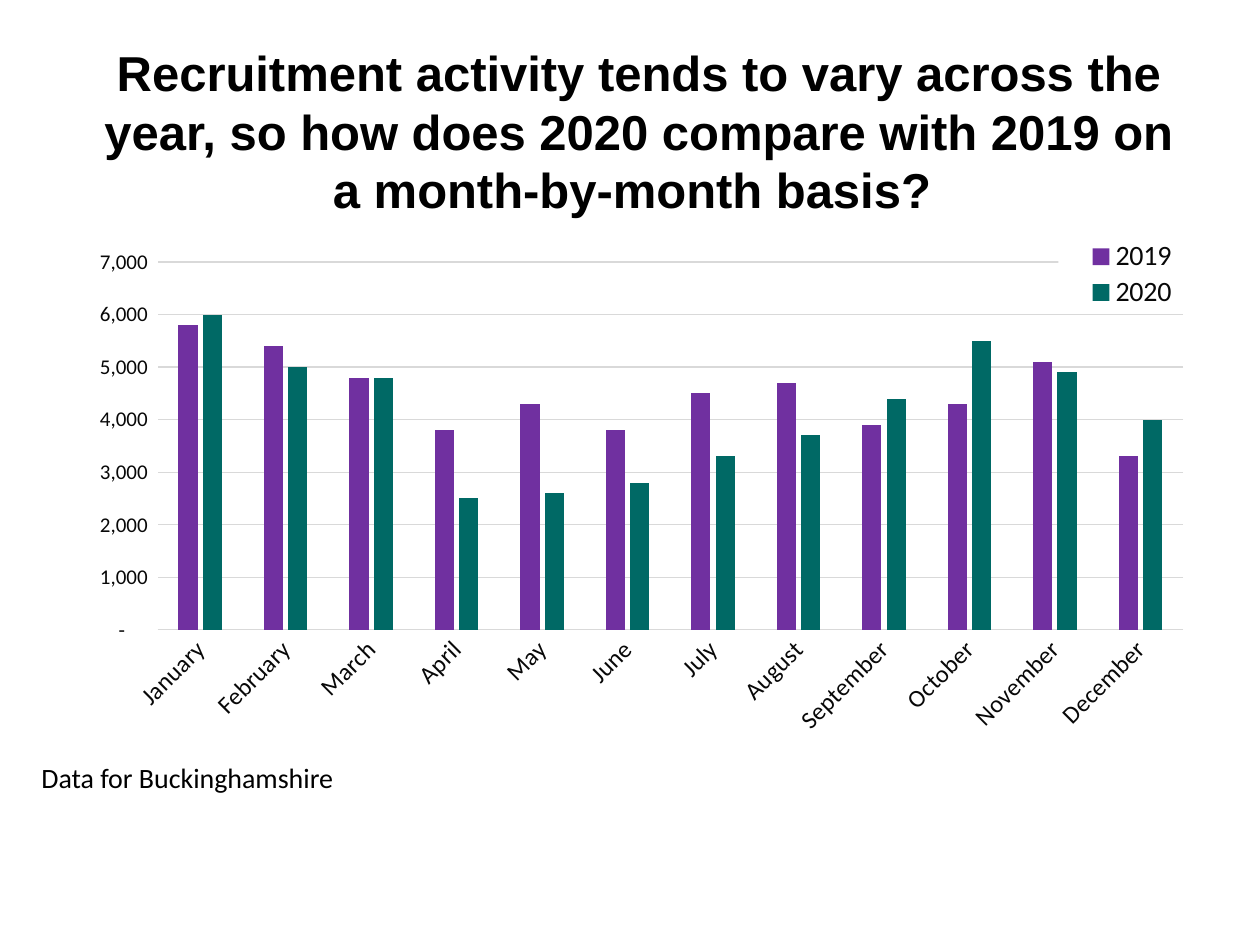
from lxml import etree
from pptx import Presentation
from pptx import util as u
from pptx.chart import data as chart_data
from pptx.dml import color
from pptx.enum import chart as ch
from pptx.enum import text
from pptx.oxml import ns, parse_xml

CHART_BOX = (0.57, 1.89, 9, 4.46)
PLOT_BOX = (1.25, 2.08, 8.14, 2.92)
LEGEND_BOX = (8.4, 1.89, 1.17, 0.58)
MONTHS = ("January", "February", "March", "April", "May", "June", "July",
          "August", "September", "October", "November", "December")
YEARS = {
    "2019": ("7030A0", (5800, 5400, 4800, 3800, 4300, 3800,
                        4500, 4700, 3900, 4300, 5100, 3300)),
    "2020": ("006965", (6000, 5000, 4800, 2500, 2600, 2800,
                        3300, 3700, 4400, 5500, 4900, 4000)),
}
COUNT_FORMAT = '_-* #,##0_-;\\-* #,##0_-;_-* "-"??_-;_-@_'


def rgb(value):
    """Turn a hex string into a colour."""
    return color.RGBColor.from_string(value)


def set_attributes(target, **values):
    """Set each named value on the target."""
    for name, value in values.items():
        setattr(target, name, value)


def set_font(font, size, tint, name="Calibri", bold=False):
    """Give a font its face, size, weight and colour."""
    set_attributes(font, name=name, size=u.Pt(size), bold=bold)
    font.color.rgb = rgb(tint)


def set_line(line, tint):
    """Draw a thin line in the given colour."""
    line.color.rgb = rgb(tint)
    line.width = u.Pt(0.75)


def add_text(slide, box, wording, font, align, anchor):
    """Add one paragraph of wrapped text."""
    frame = slide.shapes.add_textbox(*map(u.Inches, box)).text_frame
    set_attributes(frame, word_wrap=True, vertical_anchor=anchor)
    paragraph = frame.paragraphs[0]
    set_attributes(paragraph, text=wording, alignment=align)
    set_font(paragraph.runs[0].font, **font)


def manual_layout(box, inner=False):
    """Build a layout that places a chart part at a slide position."""
    left, top, width, height = CHART_BOX
    shares = {"x": (box[0] - left) / width, "y": (box[1] - top) / height,
              "w": box[2] / width, "h": box[3] / height}
    target = '<c:layoutTarget val="inner"/>' if inner else ""
    modes = '<c:xMode val="edge"/><c:yMode val="edge"/>'
    sizes = "".join(f'<c:{key} val="{share:.4f}"/>' for key, share in shares.items())
    return parse_xml(f'<c:layout {ns.nsdecls("c")}><c:manualLayout>'
                     f"{target}{modes}{sizes}</c:manualLayout></c:layout>")


def replace_layout(part, layout, index):
    """Put a layout in a chart part in place of any earlier one."""
    for earlier in part.findall(ns.qn("c:layout")):
        part.remove(earlier)
    part.insert(index, layout)


def style_axes(chart):
    """Format the month and count axes."""
    months, counts = chart.category_axis, chart.value_axis
    for axis, size in ((months, 14), (counts, 12)):
        set_attributes(axis, major_tick_mark=ch.XL_TICK_MARK.NONE,
                       minor_tick_mark=ch.XL_TICK_MARK.NONE)
        set_font(axis.tick_labels.font, size, "080808")
    set_line(months.format.line, "D9D9D9")
    months._element.find(ns.qn("c:txPr")).find(ns.qn("a:bodyPr")).set("rot", "-2700000")
    set_attributes(counts, minimum_scale=0, maximum_scale=7000, major_unit=1000,
                   has_major_gridlines=True)
    counts.format.line.fill.background()
    set_line(counts.major_gridlines.format.line, "D9D9D9")
    set_attributes(counts.tick_labels, number_format=COUNT_FORMAT,
                   number_format_is_linked=False)


def style_legend(chart):
    """Place the legend on a white patch at the top right."""
    chart.has_legend = True
    legend = chart.legend
    set_attributes(legend, position=ch.XL_LEGEND_POSITION.BOTTOM,
                   include_in_layout=False)
    set_font(legend.font, 16, "080808")
    element = legend._element
    replace_layout(element, manual_layout(LEGEND_BOX), 1)
    patch = etree.Element(ns.qn("c:spPr"))
    fill = etree.SubElement(patch, ns.qn("a:solidFill"))
    etree.SubElement(fill, ns.qn("a:srgbClr"), val="FFFFFF")
    element.find(ns.qn("c:txPr")).addprevious(patch)


def add_recruitment_chart(slide):
    """Add the monthly columns for both years."""
    data = chart_data.CategoryChartData(number_format="#,##0")
    data.categories = MONTHS
    for year, (_, counts) in YEARS.items():
        data.add_series(year, counts)
    chart = slide.shapes.add_chart(ch.XL_CHART_TYPE.COLUMN_CLUSTERED,
                                   *map(u.Inches, CHART_BOX), data).chart
    chart.has_title = False
    set_font(chart.font, 10, "000000")
    plot = chart.plots[0]
    set_attributes(plot, gap_width=219, overlap=-27, vary_by_categories=False)
    for series, (tint, _) in zip(plot.series, YEARS.values()):
        series.invert_if_negative = False
        series.format.fill.solid()
        series.format.fill.fore_color.rgb = rgb(tint)
    style_axes(chart)
    style_legend(chart)
    plot_area = chart._chartSpace.chart.plotArea
    replace_layout(plot_area, manual_layout(PLOT_BOX, inner=True), 0)


def main():
    """Build and save the slide."""
    deck = Presentation()
    set_attributes(deck, slide_width=u.Inches(10), slide_height=u.Inches(7.5))
    slide = deck.slides.add_slide(deck.slide_layouts[6])
    add_text(slide, (0.57, 0.41, 9, 1.25),
             "Recruitment activity tends to vary across the year, so how does "
             "2020 compare with 2019 on a month-by-month basis? ",
             {"size": 28, "tint": "000000", "name": "Arial", "bold": True},
             text.PP_ALIGN.CENTER, text.MSO_ANCHOR.MIDDLE)
    add_recruitment_chart(slide)
    add_text(slide, (0.23, 5.99, 3.78, 0.37), "Data for Buckinghamshire",
             {"size": 16, "tint": "000000"},
             text.PP_ALIGN.LEFT, text.MSO_ANCHOR.TOP)
    deck.save("out.pptx")


if __name__ == "__main__":
    main()
